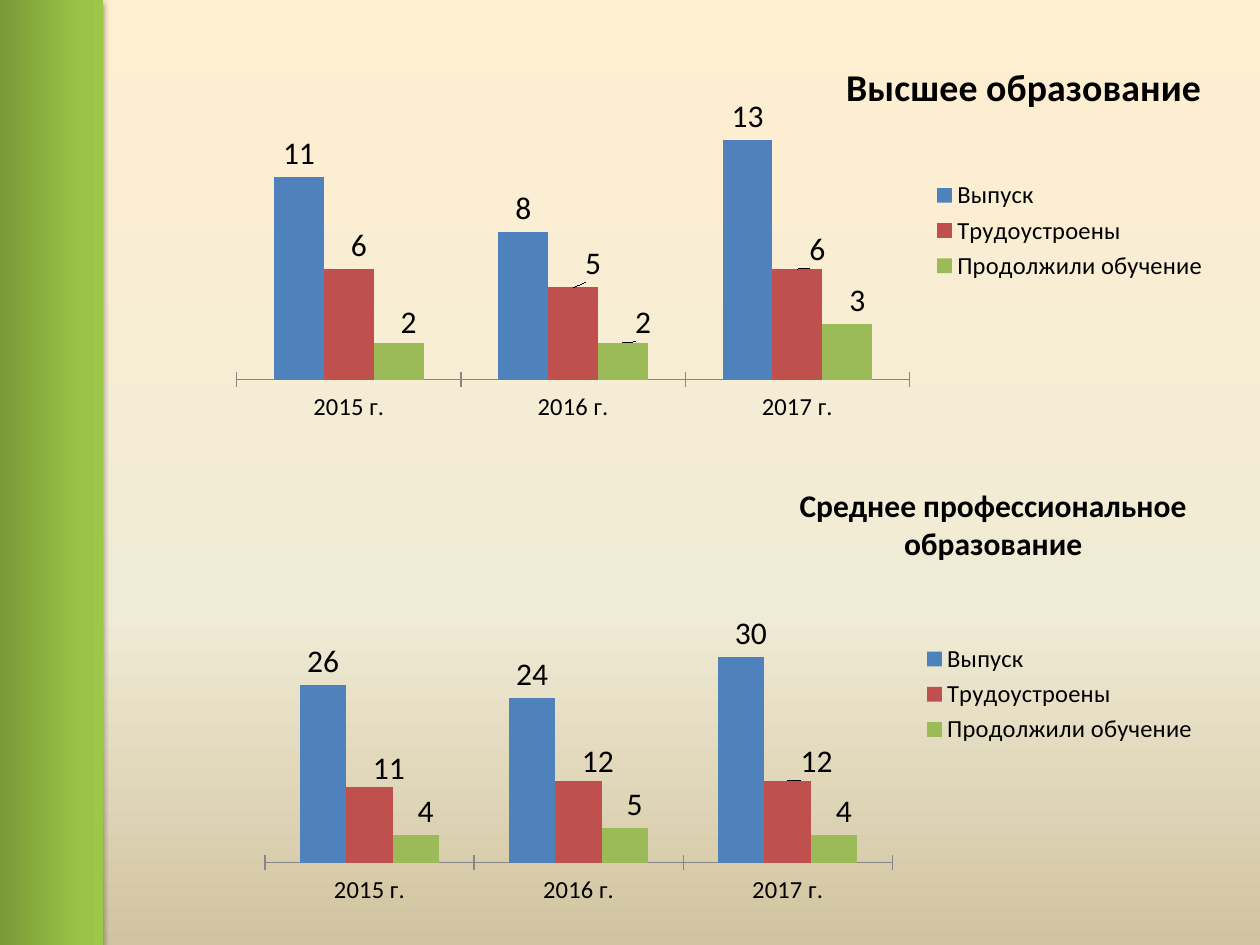
from dataclasses import dataclass

from lxml.etree import SubElement
from pptx import Presentation
from pptx.chart.data import CategoryChartData
from pptx.dml.color import RGBColor
from pptx.enum.chart import XL_CHART_TYPE, XL_LABEL_POSITION, XL_LEGEND_POSITION, XL_TICK_MARK
from pptx.enum.shapes import MSO_SHAPE
from pptx.oxml import parse_xml
from pptx.oxml.ns import nsdecls, qn
from pptx.util import Inches, Pt


@dataclass(frozen=True)
class Theme:
    font: str = "Calibri"
    ink: str = "000000"
    axis: str = "878787"
    series: tuple = ("4F81BD", "C0504D", "9BBB59")
    backdrop: tuple = ((0, "FFEFD1"), (65, "F0EBD5"), (100, "D1C39F"))
    band: tuple = ((0, "779737"), (80, "9BC348"), (100, "9DC746"))
    heading: float = 21.6
    label: float = 18
    small: float = 14


THEME = Theme()
YEARS = ("2015 г.", "2016 г.", "2017 г.")
OUTCOMES = ("Выпуск", "Трудоустроены", "Продолжили обучение")

HIGHER = {
    "title": "Высшее образование",
    "title_size": THEME.heading,
    "title_at": {"x": 0.62, "y": 0.06},
    "plot_at": {"x": 0.02, "y": 0.23, "w": 0.67, "h": 0.64},
    "maximum": 14,
    "values": ((11, 8, 13), (6, 5, 6), (2, 2, 3)),
    "nudges": {
        1: ((0.01, 0), (0.02, 0), (0.02, 0.01)),
        2: ((0.01, 0.01), (0.02, 0.01), (0.01, 0)),
    },
}
VOCATIONAL = {
    "title": "Среднее профессиональное\nобразование",
    "title_size": THEME.label,
    "title_at": {"x": 0.57, "y": 0.02},
    "plot_at": {"x": 0.02, "y": 0.34, "w": 0.65, "h": 0.54},
    "maximum": 35,
    "values": ((26, 24, 30), (11, 12, 12), (4, 5, 4)),
    "nudges": {
        0: (None, None, (0.01, 0)),
        1: ((0.02, 0.01), (0.02, 0.01), (0.03, 0.01)),
        2: ((0.01, 0), (0.01, 0), (0.01, 0)),
    },
}


def apply_format(target, formats):
    for attribute, value in formats.items():
        setattr(target, attribute, value)


def format_font(font, size, bold=False):
    apply_format(font, {"name": THEME.font, "size": Pt(size), "bold": bold})
    font.color.rgb = RGBColor.from_string(THEME.ink)


def fill_gradient(fill, owner, stops, angle):
    fill.gradient()
    fill.gradient_angle = angle
    stop_list = next(owner.iter(qn("a:gsLst")))
    for stop in list(stop_list):
        stop_list.remove(stop)
    for position, color in stops:
        stop = SubElement(stop_list, qn("a:gs"), pos=str(position * 1000))
        SubElement(stop, qn("a:srgbClr"), val=color)


def manual_layout(places, **modes):
    settings = {**modes, **places}
    entries = "".join(f'<c:{key} val="{value}"/>' for key, value in settings.items())
    return parse_xml(
        f'<c:layout {nsdecls("c")}><c:manualLayout>{entries}</c:manualLayout></c:layout>'
    )


def replace_layout(parent, layout, index):
    for previous in parent.findall(qn("c:layout")):
        parent.remove(previous)
    parent.insert(index, layout)


def place_title(chart, content):
    title = chart.chart_title
    title.text_frame.text = content["title"]
    for paragraph in title.text_frame.paragraphs:
        format_font(paragraph.font, content["title_size"], bold=True)
        for run in paragraph.runs:
            format_font(run.font, content["title_size"], bold=True)
    element = title._element
    replace_layout(element, manual_layout(content["title_at"], xMode="edge", yMode="edge"), 1)
    for overlay in element.findall(qn("c:overlay")):
        element.remove(overlay)
    element.find(qn("c:layout")).addnext(
        parse_xml(f'<c:overlay {nsdecls("c")} val="1"/>')
    )


def format_axes(chart, maximum):
    years = chart.category_axis
    apply_format(years, {"major_tick_mark": XL_TICK_MARK.CROSS, "has_major_gridlines": False})
    format_font(years.tick_labels.font, THEME.small)
    years.format.line.color.rgb = RGBColor.from_string(THEME.axis)
    apply_format(chart.value_axis, {
        "visible": False,
        "has_major_gridlines": False,
        "minimum_scale": 0,
        "maximum_scale": maximum,
    })


def format_series(series, color, nudges):
    series.format.fill.solid()
    series.format.fill.fore_color.rgb = RGBColor.from_string(color)
    labels = series.data_labels
    apply_format(labels, {"show_value": True, "position": XL_LABEL_POSITION.OUTSIDE_END})
    format_font(labels.font, THEME.label)
    for index, nudge in enumerate(nudges):
        if nudge:
            series.points[index].data_label.position = XL_LABEL_POSITION.OUTSIDE_END
            point_label = series._element.xpath(f"c:dLbls/c:dLbl[c:idx/@val={index}]")[0]
            replace_layout(point_label, manual_layout(dict(zip("xy", nudge))), 1)


def add_education_chart(slide, box, content):
    results = CategoryChartData()
    results.categories = YEARS
    for outcome, values in zip(OUTCOMES, content["values"]):
        results.add_series(outcome, values)
    chart = slide.shapes.add_chart(
        XL_CHART_TYPE.COLUMN_CLUSTERED, *map(Inches, box), results
    ).chart
    format_font(chart.font, THEME.label)
    place_title(chart, content)
    format_axes(chart, content["maximum"])

    chart.has_legend = True
    apply_format(chart.legend, {"position": XL_LEGEND_POSITION.RIGHT, "include_in_layout": False})
    format_font(chart.legend.font, THEME.small)

    columns = chart.plots[0]
    apply_format(columns, {"gap_width": 150, "overlap": 0, "vary_by_categories": False})
    for index, series in enumerate(columns.series):
        format_series(series, THEME.series[index], content["nudges"].get(index, ()))

    plot_layout = manual_layout(
        content["plot_at"], layoutTarget="inner", xMode="edge", yMode="edge"
    )
    plot_area = chart._chartSpace.find(qn("c:chart")).find(qn("c:plotArea"))
    replace_layout(plot_area, plot_layout, 0)


def add_side_band(slide, box):
    band = slide.shapes.add_shape(MSO_SHAPE.RECTANGLE, *map(Inches, box))
    band.rotation = 90
    band.line.fill.background()
    properties = band._element.spPr
    fill_gradient(band.fill, properties, THEME.band, 90)
    properties.append(parse_xml(
        f'<a:effectLst {nsdecls("a")}>'
        f'<a:outerShdw blurRad="{Pt(3.1)}" dist="{Pt(1.8)}" dir="5400000" rotWithShape="0">'
        f'<a:srgbClr val="{THEME.ink}"><a:alpha val="35000"/></a:srgbClr>'
        '</a:outerShdw></a:effectLst>'
    ))


def main():
    presentation = Presentation()
    apply_format(presentation, {"slide_width": Inches(10), "slide_height": Inches(7.5)})
    slide = presentation.slides.add_slide(presentation.slide_layouts[6])
    fill_gradient(slide.background.fill, slide.element, THEME.backdrop, 270)
    add_education_chart(slide, (1.72, 0.23, 7.97, 3.2), HIGHER)
    add_education_chart(slide, (1.95, 3.75, 7.66, 3.52), VOCATIONAL)
    add_side_band(slide, (-3.36, 3.32, 7.5, 0.86))
    presentation.save("out.pptx")


if __name__ == "__main__":
    main()
